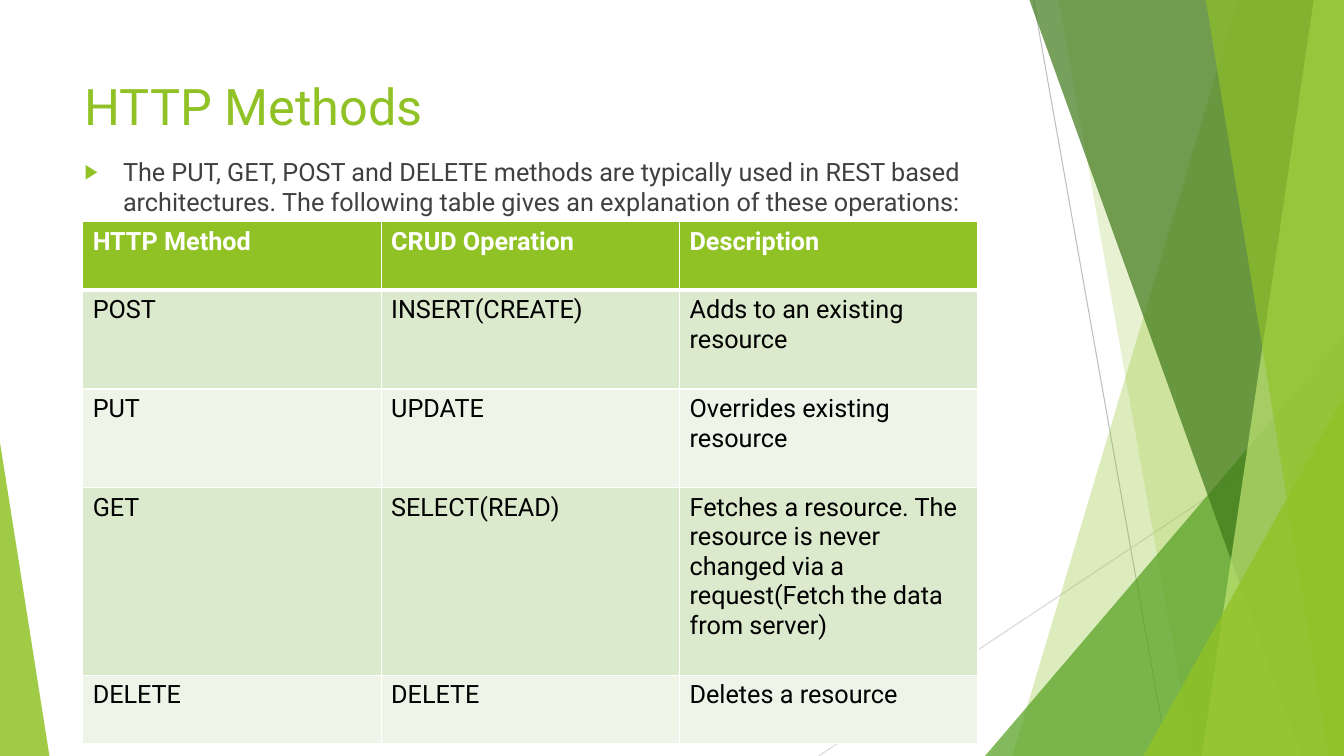
from lxml.etree import SubElement
from pptx import Presentation
from pptx.dml.color import RGBColor
from pptx.enum.shapes import MSO_CONNECTOR, MSO_SHAPE
from pptx.enum.text import MSO_ANCHOR, MSO_AUTO_SIZE, PP_ALIGN
from pptx.oxml.ns import qn
from pptx.util import Inches, Pt

TITLE = "HTTP Methods"
INTRO = ("The PUT, GET, POST and DELETE methods are typically used in REST based "
         "architectures. The following table gives an explanation of these operations:")
METHODS = [
    ("HTTP Method", "CRUD Operation", "Description"),
    ("POST", "INSERT(CREATE)", "Adds to an existing resource"),
    ("PUT", "UPDATE", "Overrides existing resource"),
    ("GET", "SELECT(READ)", "Fetches a resource. The resource is never changed via a "
                            "request(Fetch the data from server)"),
    ("DELETE", "DELETE", "Deletes a resource"),
]
ROW_HEIGHTS = [0.68, 0.98, 0.98, 1.86, 0.68]
TABLE_LEFT, TABLE_TOP, COLUMN_WIDTH = 0.82, 2.2, 2.96

FONT = "Roboto"
COLORS = {
    "lime": "90C226", "leaf": "54A021", "forest": "3F7819", "pale": "C0E474",
    "gray": "BFBFBF", "silver": "D9D9D9", "text": "404040", "black": "000000",
    "white": "FFFFFF", "odd_row": "DBE9CD", "even_row": "EEF4E8",
}
WIDTH, HEIGHT = 13.33, 7.5

HAIRLINES = [((10.25, 0), (11.58, HEIGHT), "gray"), ((WIDTH, 4.03), (8.12, HEIGHT), "silver")]
# Facets from back to front.
# band: x at the top, x at the bottom, running to the right edge of the slide
# triangle: left, top, width, apex position, standing on the bottom edge
FACETS = [
    ("band", (12.28, 10.04), "lime", 30),
    ("band", (10.5, 11.83), "lime", 20),
    ("triangle", (9.77, 3.33, 3.56, 1), "leaf", 72),
    ("band", (10.21, 12.91), "forest", 70),
    ("band", (13.03, 11.92), "pale", 70),
    ("band", (11.96, 13.18), "lime", 65),
    ("triangle", (11.34, 3.93, 1.99, 1), "lime", 80),
    ("triangle", (0, 4.39, 0.49, 0), "lime", 85),
]


def rgb(color):
    return RGBColor.from_string(COLORS[color])


def add_hairline(slide, start, end, color):
    hairline = slide.shapes.add_connector(
        MSO_CONNECTOR.STRAIGHT, *map(Inches, start + end))
    hairline.line.color.rgb = rgb(color)
    hairline.line.width = Pt(0.75)
    SubElement(hairline._element.spPr, qn("a:effectLst"))


def add_facet(slide, kind, geometry, color, opacity):
    if kind == "band":
        top_x, bottom_x = geometry
        builder = slide.shapes.build_freeform(Inches(top_x), 0)
        corners = [(WIDTH, 0), (WIDTH, HEIGHT), (bottom_x, HEIGHT)]
        builder.add_line_segments([(Inches(x), Inches(y)) for x, y in corners], close=True)
        facet = builder.convert_to_shape()
    else:
        left, top, width, apex = geometry
        facet = slide.shapes.add_shape(
            MSO_SHAPE.ISOSCELES_TRIANGLE, *map(Inches, (left, top, width, HEIGHT - top)))
        facet.adjustments[0] = apex
    facet.shadow.inherit = False
    facet.line.fill.background()
    facet.fill.solid()
    facet.fill.fore_color.rgb = rgb(color)
    srgb = next(facet._element.spPr.iter(qn("a:srgbClr")))
    SubElement(srgb, qn("a:alpha"), val=str(opacity * 1000))


def write(frame, text, size, color, bold=False):
    frame.text = text
    paragraph = frame.paragraphs[0]
    paragraph.alignment = PP_ALIGN.LEFT
    font = paragraph.runs[0].font
    for attribute, value in {"name": FONT, "size": Pt(size), "bold": bold}.items():
        setattr(font, attribute, value)
    font.color.rgb = rgb(color)
    return paragraph


def fill_placeholder(placeholder, box, anchor, text, size, color):
    placeholder.left, placeholder.top, placeholder.width, placeholder.height = map(Inches, box)
    frame = placeholder.text_frame
    for attribute, value in {"word_wrap": True, "auto_size": MSO_AUTO_SIZE.NONE,
                             "vertical_anchor": anchor}.items():
        setattr(frame, attribute, value)
    return write(frame, text, size, color)


def add_bullet(paragraph):
    paragraph.space_before = Pt(10)
    properties = paragraph._p.get_or_add_pPr()
    properties.set("marL", str(Inches(0.38)))
    properties.set("indent", str(Inches(-0.38)))
    SubElement(SubElement(properties, qn("a:buClr")), qn("a:srgbClr"), val=COLORS["lime"])
    SubElement(properties, qn("a:buSzPct"), val="80000")
    SubElement(properties, qn("a:buChar"), char="▶")


def add_borders(cell, widths):
    """Draw white borders; widths maps each side (L, R, T, B) to points."""
    properties = cell._tc.get_or_add_tcPr()
    for position, (side, width) in enumerate(widths.items()):
        border = SubElement(properties, qn(f"a:ln{side}"), w=str(Pt(width)))
        fill = SubElement(border, qn("a:solidFill"))
        SubElement(fill, qn("a:srgbClr"), val=COLORS["white"])
        properties.insert(position, border)


def add_methods_table(slide):
    column_count = len(METHODS[0])
    table = slide.shapes.add_table(
        len(METHODS), column_count, Inches(TABLE_LEFT), Inches(TABLE_TOP),
        Inches(COLUMN_WIDTH * column_count), Inches(sum(ROW_HEIGHTS))).table
    for column in table.columns:
        column.width = Inches(COLUMN_WIDTH)
    for row_index, (texts, height) in enumerate(zip(METHODS, ROW_HEIGHTS)):
        table.rows[row_index].height = Inches(height)
        header = row_index == 0
        background = "lime" if header else "odd_row" if row_index % 2 else "even_row"
        for column_index, text in enumerate(texts):
            cell = table.cell(row_index, column_index)
            write(cell.text_frame, text, 18, "white" if header else "black", header)
            cell.fill.solid()
            cell.fill.fore_color.rgb = rgb(background)
            add_borders(cell, {"L": 1, "R": 1, "T": 3 if row_index == 1 else 1,
                               "B": 3 if header else 1})


def main():
    presentation = Presentation()
    presentation.slide_width, presentation.slide_height = Inches(WIDTH), Inches(HEIGHT)
    slide = presentation.slides.add_slide(presentation.slide_layouts[1])
    title, body = slide.placeholders

    for hairline in HAIRLINES:
        add_hairline(slide, *hairline)
    for facet in FACETS:
        add_facet(slide, *facet)

    fill_placeholder(title, (0.74, 0.67, 9.4, 0.75), MSO_ANCHOR.MIDDLE, TITLE, 36, "lime")
    add_bullet(fill_placeholder(
        body, (0.74, 1.5, 9.4, 5.11), MSO_ANCHOR.TOP, INTRO, 18, "text"))
    for placeholder in (title, body):  # bring the text in front of the facets
        slide.shapes._spTree.append(placeholder._element)
    add_methods_table(slide)

    presentation.save("out.pptx")


if __name__ == "__main__":
    main()
